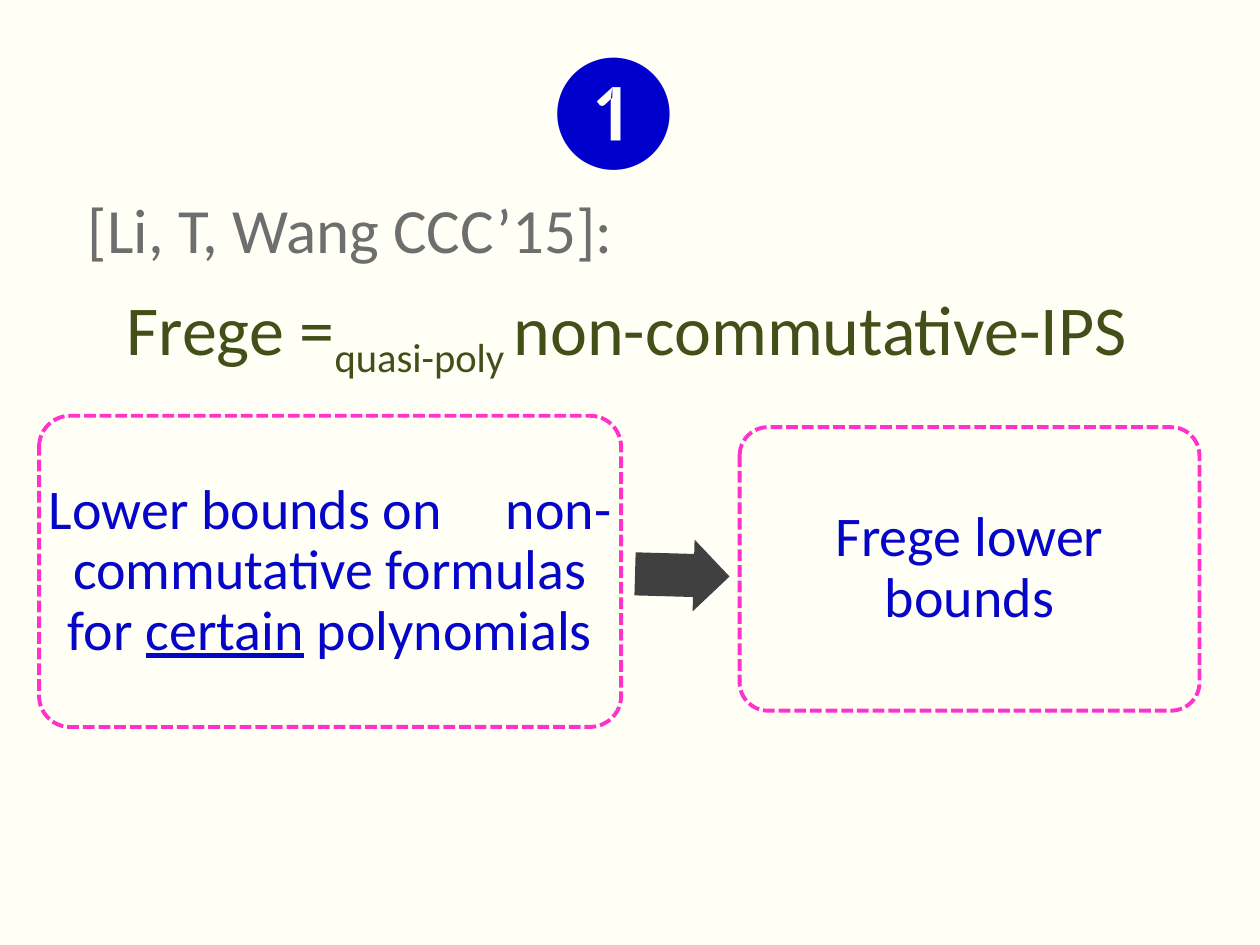
from pptx import Presentation
from pptx.dml.color import RGBColor
from pptx.enum import dml, shapes, text
from pptx.util import Inches, Pt

INK, PINK, GREEN = "0606C8", "FF33CC", "424F18"
MID, TOP = text.MSO_ANCHOR.MIDDLE, text.MSO_ANCHOR.TOP
LEFT, CENTER = text.PP_ALIGN.LEFT, text.PP_ALIGN.CENTER


def rgb(code):
    return RGBColor.from_string(code)


class Deck:
    font = "Calibri"

    def __init__(self, wide, high):
        self.prs = Presentation()
        self.prs.slide_width, self.prs.slide_height = Inches(wide), Inches(high)

    def page(self, back):
        self.slide = self.prs.slides.add_slide(self.prs.slide_layouts[5])
        fill = self.slide.background.fill
        fill.solid()
        fill.fore_color.rgb = rgb(back)

    def words(self, shape, runs, size, color, align=CENTER, anchor=MID,
              pad=(0, 0), line=0.9):
        """Fill shape with (string, run attributes) pairs; pad is x and y inset."""
        frame = shape.text_frame
        frame.word_wrap = True
        frame.auto_size = text.MSO_AUTO_SIZE.NONE
        frame.vertical_anchor = anchor
        frame.margin_left = frame.margin_right = Inches(pad[0])
        frame.margin_top = frame.margin_bottom = Inches(pad[1])
        para = frame.paragraphs[0]
        para.alignment, para.line_spacing = align, line
        for string, marks in runs:
            run = para.add_run()
            run.text = string
            for key, value in marks.items():
                run._r.get_or_add_rPr().set(key, value)
        para.font.name, para.font.size = self.font, Pt(size)
        para.font.color.rgb = rgb(color)

    def title(self, box, string, size, color):
        shape = self.slide.shapes.title
        shape.left, shape.top, shape.width, shape.height = map(Inches, box)
        self.words(shape, [(string, {})], size, color,
                   anchor=TOP, pad=(0.1, 0.05), line=1)

    def label(self, box, runs, size, color, **style):
        shape = self.slide.shapes.add_textbox(*map(Inches, box))
        self.words(shape, runs, size, color, **style)

    def shape(self, kind, box, *adjust):
        shape = self.slide.shapes.add_shape(kind, *map(Inches, box))
        shape.shadow.inherit = False
        for i, value in enumerate(adjust):
            shape.adjustments[i] = value
        return shape

    def card(self, box, runs, pad):
        shape = self.shape(shapes.MSO_SHAPE.ROUNDED_RECTANGLE, box, 0.1)
        shape.fill.background()
        shape.line.color.rgb = rgb(PINK)
        shape.line.width = Pt(2.25)
        shape.line.dash_style = dml.MSO_LINE.SQUARE_DOT
        self.words(shape, runs, 32, INK, pad=(pad, pad))

    def arrow(self, box, turn, color):
        shape = self.shape(shapes.MSO_SHAPE.RIGHT_ARROW, box, 0.6, 0.5)
        shape.rotation = turn
        shape.fill.solid()
        shape.fill.fore_color.rgb = rgb(color)
        shape.line.fill.background()


def main():
    deck = Deck(10, 7.5)
    deck.page("FFFFF6")
    deck.title((0.6, 0.23, 8.55, 1.22), "❶", 66, "0000CC")
    deck.label((0.6, 1.46, 8.97, 0.71), [("[Li, T, Wang CCC’15]:", {})],
               36, "6E6E6E", align=LEFT, anchor=TOP, pad=(0.1, 0.05), line=1)
    deck.label((0.41, 2.07, 9.13, 1.09),
               [("Frege =", {}), ("quasi-poly ", {"baseline": "-25000"}),
                ("non-commutative-IPS", {})], 40, GREEN)
    # The widened space sets "non-" apart from the words before it.
    deck.card((0.31, 3.3, 4.62, 2.47),
              [("Lower bounds on", {}), (" ", {"spc": "2900"}),
               ("non-commutative formulas for ", {}),
               ("certain", {"u": "sng"}), (" polynomials", {})], 0)
    deck.arrow((5.04, 4.28, 0.75, 0.57), 1.6, "404040")
    deck.card((5.87, 3.39, 3.65, 2.25), [("Frege lower bounds", {})], 0.13)
    deck.prs.save("out.pptx")


if __name__ == "__main__":
    main()
